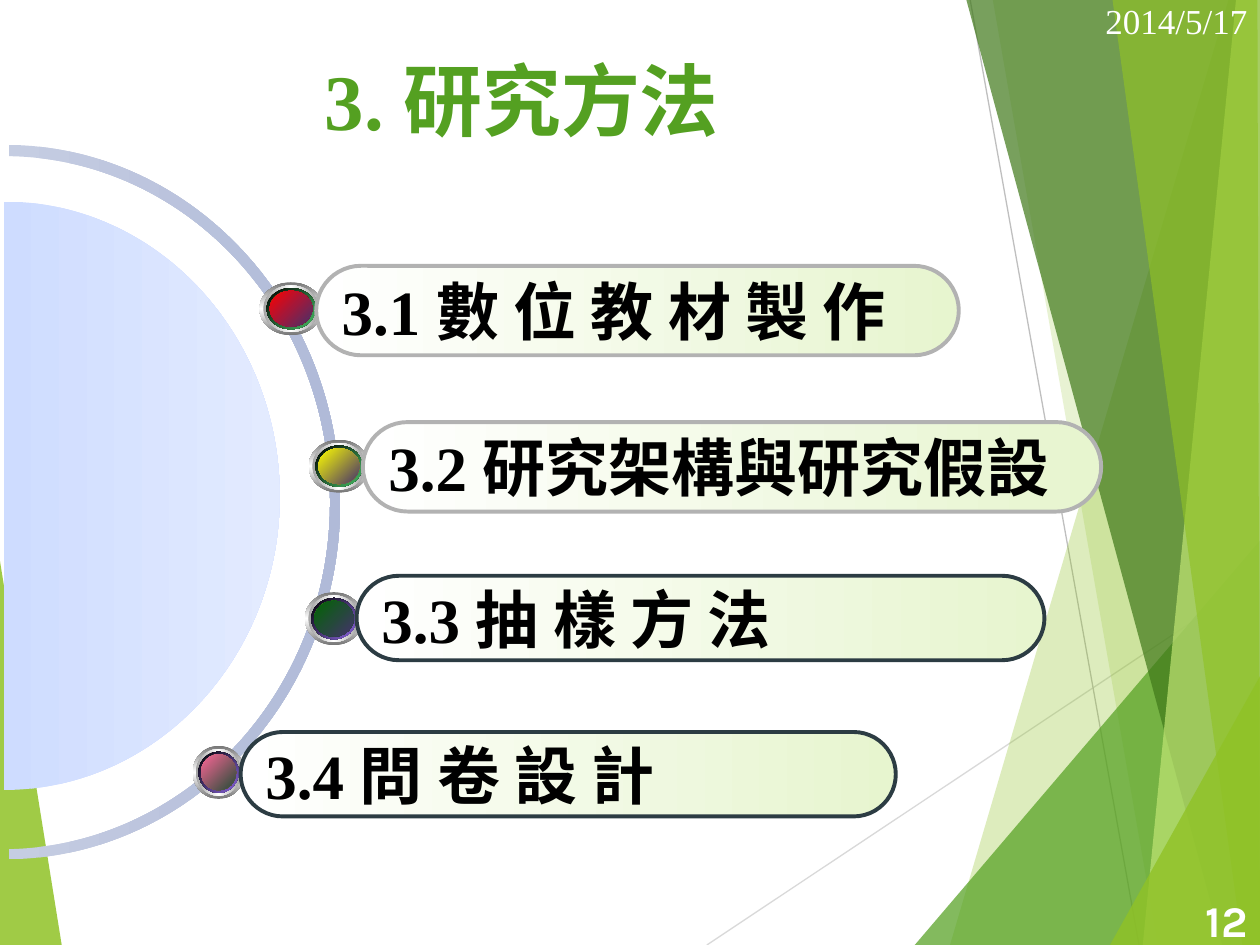
"""Build the research methods agenda slide with its green facets and half dial."""
from lxml import etree
from pptx import Presentation
from pptx.dml.color import RGBColor
from pptx.enum.shapes import MSO_CONNECTOR, MSO_SHAPE
from pptx.enum.text import MSO_ANCHOR, PP_ALIGN
from pptx.oxml.ns import qn
from pptx.util import Inches, Pt

STRAIGHT = MSO_CONNECTOR.STRAIGHT
OVAL, PILL = MSO_SHAPE.OVAL, MSO_SHAPE.ROUNDED_RECTANGLE
MIDDLE = MSO_ANCHOR.MIDDLE
LEFT, CENTER, RIGHT = PP_ALIGN.LEFT, PP_ALIGN.CENTER, PP_ALIGN.RIGHT
SERIF, CJK, SANS = "Times New Roman", "Noto Sans CJK SC", "Karla"

COLORS = {
    "white": "FFFFFF", "black": "000000", "lime": "90C226", "green": "54A021",
    "forest": "3F7819", "pale_lime": "C0E474", "gray_line": "B2B2B2",
    "dark_line": "2C3C43", "ray_light": "D9D9D9", "ray_dark": "BFBFBF",
    "arc_light": "C5CDE2", "arc_dark": "B0BAD8", "disc_dark": "CEDCFF",
    "disc_light": "E3EBFF", "steel": "767676", "silver": "A2A2A2",
    "leaf": "99CA3C", "moss": "759B2E", "mint": "48BE67", "violet": "8D67E1",
    "purple": "45326D", "pine": "224C36", "pill_end": "E7F5CF", "red": "FF0000",
    "wine": "A4183A", "yellow": "FFFF00", "dark_green": "006600", "pink": "FF6699",
}


def paint(shape, stops, angle=0, alpha=100):
    """Fill a shape with one colour or an even gradient, without outline or shadow."""
    shape.shadow.inherit = False
    shape.line.fill.background()
    fill = etree.Element(qn("a:solidFill" if len(stops) == 1 else "a:gradFill"))
    parent = fill if len(stops) == 1 else etree.SubElement(fill, qn("a:gsLst"))
    for index, name in enumerate(stops):
        holder = parent
        if len(stops) > 1:
            position = 100000 * index // (len(stops) - 1)
            holder = etree.SubElement(parent, qn("a:gs"), pos=str(position))
        color = etree.SubElement(holder, qn("a:srgbClr"), val=COLORS[name])
        if alpha < 100:
            etree.SubElement(color, qn("a:alpha"), val=str(alpha * 1000))
    if len(stops) > 1:
        etree.SubElement(fill, qn("a:lin"), ang=str(angle * 60000), scaled="0")
    shape._element.spPr.insert(2, fill)


def write(shape, pieces, size, color, alignment, bold=True):
    """Write (text, font) pieces as one paragraph."""
    text_frame = shape.text_frame
    text_frame.word_wrap = True
    text_frame.vertical_anchor = MIDDLE
    paragraph = text_frame.paragraphs[0]
    paragraph.alignment = alignment
    for text, font_name in pieces:
        run = paragraph.add_run()
        run.text = text
        run.font.name = font_name
        run.font.size = Pt(size)
        run.font.bold = bold
        run.font.color.rgb = RGBColor.from_string(COLORS[color])
        etree.SubElement(run.font._element, qn("a:ea"), typeface=CJK)


presentation = Presentation()
presentation.slide_width = Inches(10)
presentation.slide_height = Inches(7.5)
slide = presentation.slides.add_slide(presentation.slide_layouts[6])
shapes = slide.shapes

rays = [((5.61, 7.5), (10.01, 4.57), "ray_light"), ((7.7, 0), (9.04, 7.5), "ray_dark")]
for start, end, color in rays:
    ray = shapes.add_connector(STRAIGHT, *map(Inches, start + end))
    ray.line.width = Pt(0.75)
    ray.line.color.rgb = RGBColor.from_string(COLORS[color])
    etree.SubElement(ray._element.spPr, qn("a:effectLst"))

arc = [
    (0.07, 1.24), (1.48, 1.26), (2.62, 2.48), (2.62, 3.99),
    (2.62, 5.49), (1.48, 6.71), (0.07, 6.74), (0.07, 6.82),
    (1.53, 6.8), (2.7, 5.53), (2.7, 3.99), (2.7, 2.44), (1.53, 1.17), (0.07, 1.15),
]
disc = [
    (0.03, 1.6), (1.24, 1.6), (2.22, 2.65), (2.22, 3.94),
    (2.22, 5.22), (1.24, 6.27), (0.03, 6.27),
]
outlines = [
    (["lime"], 85, [(-0.01, 4.39), (0.49, 7.5), (-0.01, 7.5)], []),
    (["lime"], 30, [(9.75, 0), (7.54, 7.5), (10.01, 7.5), (10.01, 0)], []),
    (["lime"], 20, [(7.88, 0), (9.19, 7.5), (10.01, 7.5), (10.01, 0)], []),
    (["green"], 72, [(7.26, 7.5), (10, 4.29), (10.01, 7.5)], []),
    (["forest"], 70, [(7.67, 0), (9.7, 7.5), (10.01, 7.5), (10.01, 0)], []),
    (["pale_lime"], 70, [(9.81, 0), (9.07, 7.5), (10.01, 7.5), (10, 0)], []),
    (["lime"], 65, [(8.83, 0), (9.86, 7.5), (10, 7.5), (9.98, 0)], []),
    (["lime"], 80, [(8.81, 7.5), (10.01, 5.35), (10.01, 7.5)], []),
    (["arc_light", "arc_dark"], 100, arc, [0, 3, 7, 10]),
    (["disc_dark", "disc_light"], 100, disc, [0, 3]),
]
for stops, alpha, points, curve_starts in outlines:
    corners = [(Inches(x), Inches(y)) for x, y in points]
    builder = shapes.build_freeform(*corners[0])
    builder.add_line_segments(corners[1:], close=True)
    outline = builder.convert_to_shape()
    segments = list(outline._element.iter(qn("a:lnTo")))
    for first in curve_starts:
        curve = etree.Element(qn("a:cubicBezTo"))
        segments[first].addprevious(curve)
        for segment in segments[first:first + 3]:
            curve.append(segment[0])
            segment.getparent().remove(segment)
    paint(outline, stops, alpha=alpha)

labels = [
    ((0.67, 0.36, 6.94, 0.86), 45, "green", CENTER, True, [("3. 研究方法", SERIF)]),
    ((9.25, 7.1, 0.75, 0.4), 25, "white", RIGHT, True, [("12", SANS)]),
    ((8.67, -0.04, 1.33, 0.4), 20, "white", RIGHT, False, [("2014/5/17", SERIF)]),
]
for box, size, color, alignment, bold, pieces in labels:
    label = shapes.add_textbox(*map(Inches, box))
    write(label, pieces, size, color, alignment, bold)

items = [
    ("3.1 ", "數 位 教 材 製 作", (2.51, 2.11, 5.1, 0.71), "gray_line",
     (2.06, 2.24, 0.5), "mint", ["red", "wine", "purple"]),
    ("3.2 ", "研究架構與研究假設", (2.88, 3.35, 5.86, 0.71), "gray_line",
     (2.45, 3.49, 0.48), "mint", ["yellow", "purple"]),
    ("3.3 ", "抽 樣 方 法", (2.83, 4.57, 5.46, 0.67), "dark_line",
     (2.42, 4.7, 0.46), "violet", ["dark_green", "pine", "purple"]),
    ("3.4 ", "問 卷 設 計", (1.91, 5.81, 5.2, 0.67), "dark_line",
     (1.53, 5.92, 0.41), "violet", ["pink", "pine"]),
]
ball_height = 0.42
for number, topic, box, border, (left, top, width), glow, core in items:
    layers = [
        (1, ["steel", "white", "steel"], 90),
        (0.88, ["silver", "white", "silver"], 0),
        (0.78, ["white", "leaf", "white"], 45),
        (0.78, ["black", glow], 45),
        (0.68, ["moss", "leaf", "moss"], 315),
        (0.68, core, 45),
    ]
    for scale, stops, angle in layers:
        inset = (1 - scale) / 2
        ball = shapes.add_shape(
            OVAL, Inches(left + width * inset), Inches(top + ball_height * inset),
            Inches(width * scale), Inches(ball_height * scale))
        paint(ball, stops, angle)

    pill = shapes.add_shape(PILL, *map(Inches, box))
    pill.adjustments[0] = 0.5
    paint(pill, ["white", "pill_end"])
    pill.line.width = Pt(2.25)
    pill.line.color.rgb = RGBColor.from_string(COLORS[border])
    write(pill, [(number, SERIF), (topic, CJK)], 36, "black", LEFT)

presentation.save("out.pptx")
